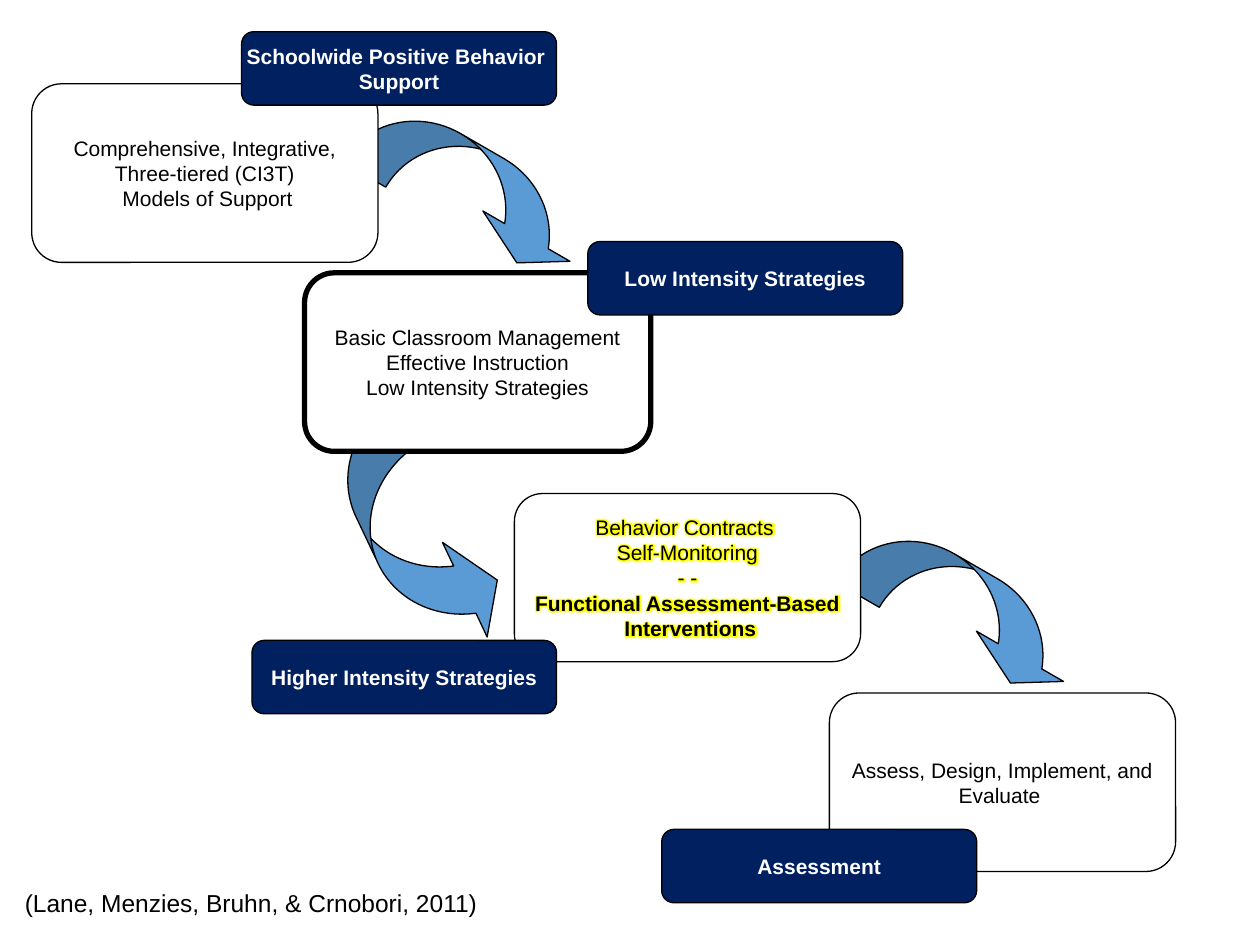
import pptx
import pptx.util
import pptx.oxml
import pptx.oxml.ns
import pptx.dml.color
import pptx.enum.shapes
import pptx.enum.text

Cm, Pt = pptx.util.Cm, pptx.util.Pt
SHAPES = pptx.enum.shapes.MSO_SHAPE
COLORS = {"navy": "002060", "blue": "5B9BD5", "white": "FFFFFF", "black": "000000", "glow": "FFFF00"}
FONT = "Arial"

ARROWS = [
    (SHAPES.CURVED_DOWN_ARROW, (6.98, 2.96, 5.08, 1.69), 30, (0.6, 1.2, 0.333)),
    (SHAPES.CURVED_UP_ARROW, (5.79, 9.68, 5.28, 2.03), 64.7, (0.519, 1.039, 0.333)),
    (SHAPES.CURVED_DOWN_ARROW, (16.93, 11.43, 5.08, 1.69), 30, (0.6, 1.2, 0.333)),
]
BOXES = [
    {"area": (0.64, 1.69, 6.98, 3.6),
     "lines": ["Comprehensive, Integrative,", "Three-tiered (CI3T)", " Models of Support"]},
    {"area": (16.72, 13.97, 6.98, 3.6),
     "lines": ["Assess, Design, Implement, and", "Evaluate "]},
    {"area": (6.14, 5.5, 6.98, 3.6), "border": 3,
     "lines": ["Basic Classroom Management", "Effective Instruction", "Low Intensity Strategies"]},
    {"area": (10.37, 9.95, 6.98, 3.39), "glow": True,
     "lines": ["Behavior Contracts ", "Self-Monitoring", "- -",
               "Functional Assessment-Based", " Interventions"],
     "bold": ["Functional Assessment-Based", " Interventions"]},
]
LABELS = [
    ((4.87, 0.64, 6.35, 1.48), ["Schoolwide Positive Behavior ", "Support"]),
    ((11.85, 4.87, 6.35, 1.48), ["Low Intensity Strategies"]),
    ((5.08, 12.91, 6.14, 1.48), ["Higher Intensity Strategies"]),
    ((13.34, 16.72, 6.35, 1.48), ["Assessment"]),
]
CITATION = "(Lane, Menzies, Bruhn, & Crnobori, 2011)"


def color(name):
    return pptx.dml.color.RGBColor.from_string(COLORS[name])


def add_filled_shape(slide, kind, area, fill, border=0.75):
    shape = slide.shapes.add_shape(kind, *map(Cm, area))
    shape.shadow.inherit = False
    shape.fill.solid()
    shape.fill.fore_color.rgb = color(fill)
    shape.line.color.rgb = color("black")
    shape.line.width = Pt(border)
    return shape


def format_run(run, size, font_color, bold=False):
    run.font.size = Pt(size)
    run.font.name = FONT
    run.font.bold = bold
    run.font.color.rgb = color(font_color)


def add_glow(run):
    effects = pptx.oxml.parse_xml(
        f'<a:effectLst {pptx.oxml.ns.nsdecls("a")}><a:glow rad="63500">'
        f'<a:srgbClr val="{COLORS["glow"]}"/></a:glow></a:effectLst>')
    run.font._element.find(pptx.oxml.ns.qn("a:solidFill")).addnext(effects)


def add_card(slide, area, lines, fill, font_color, border=0.75, bold=(), glow=False):
    shape = add_filled_shape(slide, SHAPES.ROUNDED_RECTANGLE, area, fill, border)
    frame = shape.text_frame
    frame.text = "\n".join(lines)
    frame.word_wrap = False
    frame.vertical_anchor = pptx.enum.text.MSO_ANCHOR.MIDDLE
    for paragraph in frame.paragraphs:
        paragraph.alignment = pptx.enum.text.PP_ALIGN.CENTER
        for run in paragraph.runs:
            format_run(run, 12, font_color, run.text in bold)
            if glow:
                add_glow(run)


def add_citation(slide):
    text_box = slide.shapes.add_textbox(Cm(0.25), Cm(17.78), Cm(9.68), Cm(0.86))
    frame = text_box.text_frame
    frame.text = CITATION
    frame.word_wrap = False
    frame.auto_size = pptx.enum.text.MSO_AUTO_SIZE.SHAPE_TO_FIT_TEXT
    format_run(frame.paragraphs[0].runs[0], 14, "black")


def main():
    """Build the slide on tiers of behavior support."""
    presentation = pptx.Presentation()
    presentation.slide_width, presentation.slide_height = Cm(25.4), Cm(19.05)
    slide = presentation.slides.add_slide(presentation.slide_layouts[6])
    for kind, area, rotation, adjustments in ARROWS:
        arrow = add_filled_shape(slide, kind, area, "blue")
        arrow.rotation = rotation
        for index, value in enumerate(adjustments):
            arrow.adjustments[index] = value
    for box in BOXES:
        add_card(slide, fill="white", font_color="black", **box)
    for area, lines in LABELS:
        add_card(slide, area, lines, "navy", "white", bold=lines)
    add_citation(slide)
    presentation.save("out.pptx")


if __name__ == "__main__":
    main()
